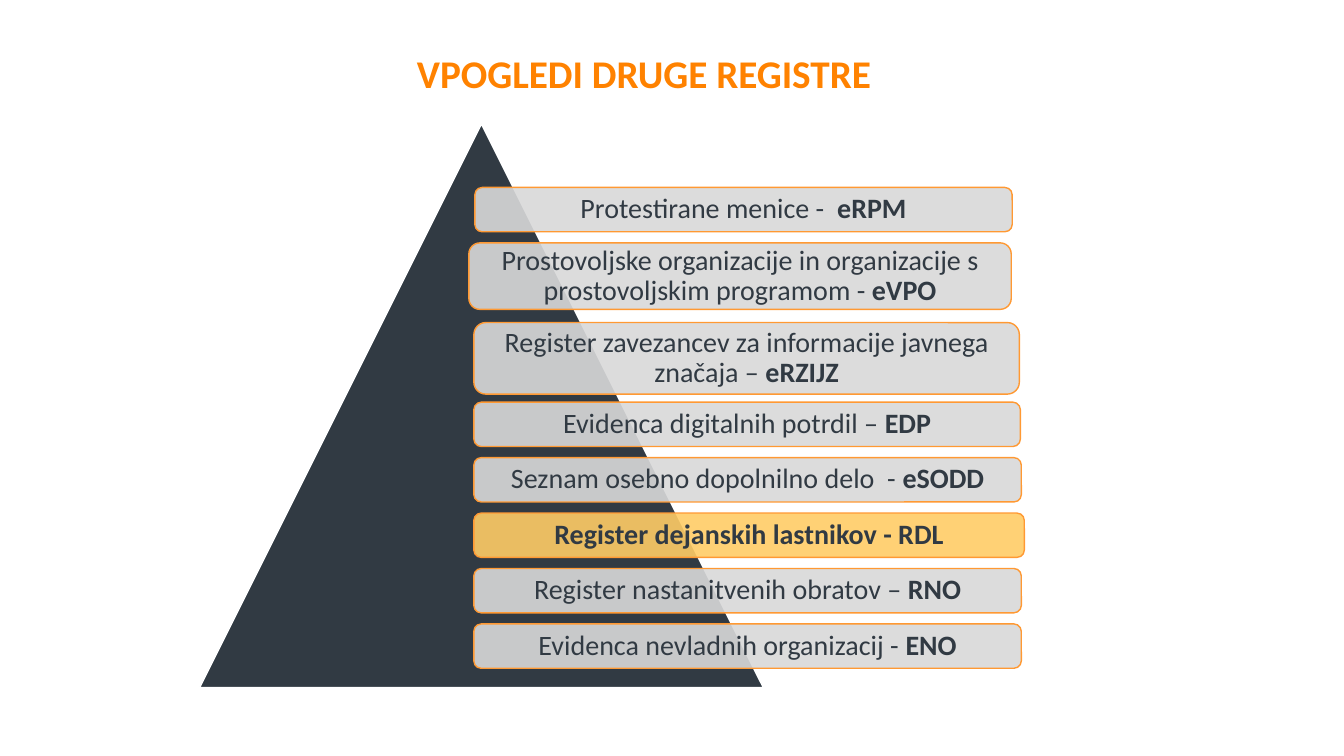
from dataclasses import dataclass

from lxml.etree import SubElement
from pptx import Presentation
from pptx.dml.color import RGBColor
from pptx.enum.shapes import MSO_SHAPE
from pptx.enum.text import MSO_ANCHOR, MSO_AUTO_SIZE, PP_ALIGN
from pptx.oxml.ns import qn
from pptx.util import Inches, Pt

ORANGE = RGBColor(0xFF, 0x82, 0x00)
BORDER = RGBColor(0xFF, 0x99, 0x33)
SLATE = RGBColor(0x31, 0x3A, 0x43)
GREY = RGBColor(0xD9, 0xD9, 0xD9)
YELLOW = RGBColor(0xFF, 0xCC, 0x66)
WHITE = RGBColor(0xFF, 0xFF, 0xFF)


@dataclass
class Register:
    label: str
    code: str
    top: float
    width: float
    left: float = 4.7
    height: float = 0.44
    fill: RGBColor = GREY


LOWER_TOP = 3.99
LOWER_STEP = 0.55

REGISTERS = [
    Register("Protestirane menice -  ", "eRPM", 1.86, 5.33, left=4.71),
    Register("Prostovoljske organizacije in organizacije s prostovoljskim programom - ",
             "eVPO", 2.41, 5.38, left=4.65, height=0.66),
    Register("Register zavezancev za informacije javnega značaja – ",
             "eRZIJZ", 3.2, 5.41, height=0.71),
    Register("Evidenca digitalnih potrdil – ", "EDP", LOWER_TOP, 5.42),
    Register("Seznam osebno dopolnilno delo  - ", "eSODD", LOWER_TOP + LOWER_STEP, 5.43),
    Register("", "Register dejanskih lastnikov - RDL", LOWER_TOP + 2 * LOWER_STEP, 5.46,
             fill=YELLOW),
    Register("Register nastanitvenih obratov – ", "RNO", LOWER_TOP + 3 * LOWER_STEP, 5.43),
    Register("Evidenca nevladnih organizacij - ", "ENO", LOWER_TOP + 4 * LOWER_STEP, 5.43),
]


def add_text(p, text: str, *, size: float, color: RGBColor, bold: bool = False) -> None:
    r = p.add_run()
    r.text = text
    r.font.name = "Calibri"
    r.font.size = Pt(size)
    r.font.bold = bold
    r.font.color.rgb = color


def add_box(s, kind: MSO_SHAPE, left: float, top: float, width: float, height: float,
            fill: RGBColor, line: RGBColor):
    sp = s.shapes.add_shape(kind, Inches(left), Inches(top), Inches(width), Inches(height))
    sp.shadow.inherit = False
    sp.fill.solid()
    sp.fill.fore_color.rgb = fill
    sp.line.color.rgb = line
    sp.line.width = Pt(1)
    return sp


def set_opacity(sp, percent: int) -> None:
    color = sp._element.spPr.find(qn("a:solidFill")).find(qn("a:srgbClr"))
    SubElement(color, qn("a:alpha")).set("val", str(percent * 1000))


def add_title(s, text: str) -> None:
    sp = s.shapes.title
    sp.left, sp.top = Inches(0.78), Inches(0.44)
    sp.width, sp.height = Inches(11.3), Inches(0.69)
    tf = sp.text_frame
    tf.auto_size = MSO_AUTO_SIZE.NONE
    tf.vertical_anchor = MSO_ANCHOR.TOP
    p = tf.paragraphs[0]
    p.alignment = PP_ALIGN.CENTER
    add_text(p, text, size=28, color=ORANGE, bold=True)


def add_register(s, reg: Register) -> None:
    sp = add_box(s, MSO_SHAPE.ROUNDED_RECTANGLE, reg.left, reg.top, reg.width, reg.height,
                 reg.fill, BORDER)
    set_opacity(sp, 90)
    tf = sp.text_frame
    tf.word_wrap = True
    tf.vertical_anchor = MSO_ANCHOR.MIDDLE
    tf.margin_left = tf.margin_right = Inches(0.1)
    tf.margin_top = tf.margin_bottom = 0
    p = tf.paragraphs[0]
    p.alignment = PP_ALIGN.CENTER
    p.line_spacing = 0.9
    if reg.label:
        add_text(p, reg.label, size=20, color=SLATE)
    add_text(p, reg.code, size=20, color=SLATE, bold=True)


def main() -> None:
    prs = Presentation()
    prs.slide_width, prs.slide_height = Inches(13.33), Inches(7.5)
    s = prs.slides.add_slide(prs.slide_layouts[5])
    add_title(s, "VPOGLEDI DRUGE REGISTRE ")
    add_box(s, MSO_SHAPE.ISOSCELES_TRIANGLE, 1.98, 1.23, 5.59, 5.59, SLATE, WHITE)
    for reg in REGISTERS:
        add_register(s, reg)
    prs.save("out.pptx")


if __name__ == "__main__":
    main()
